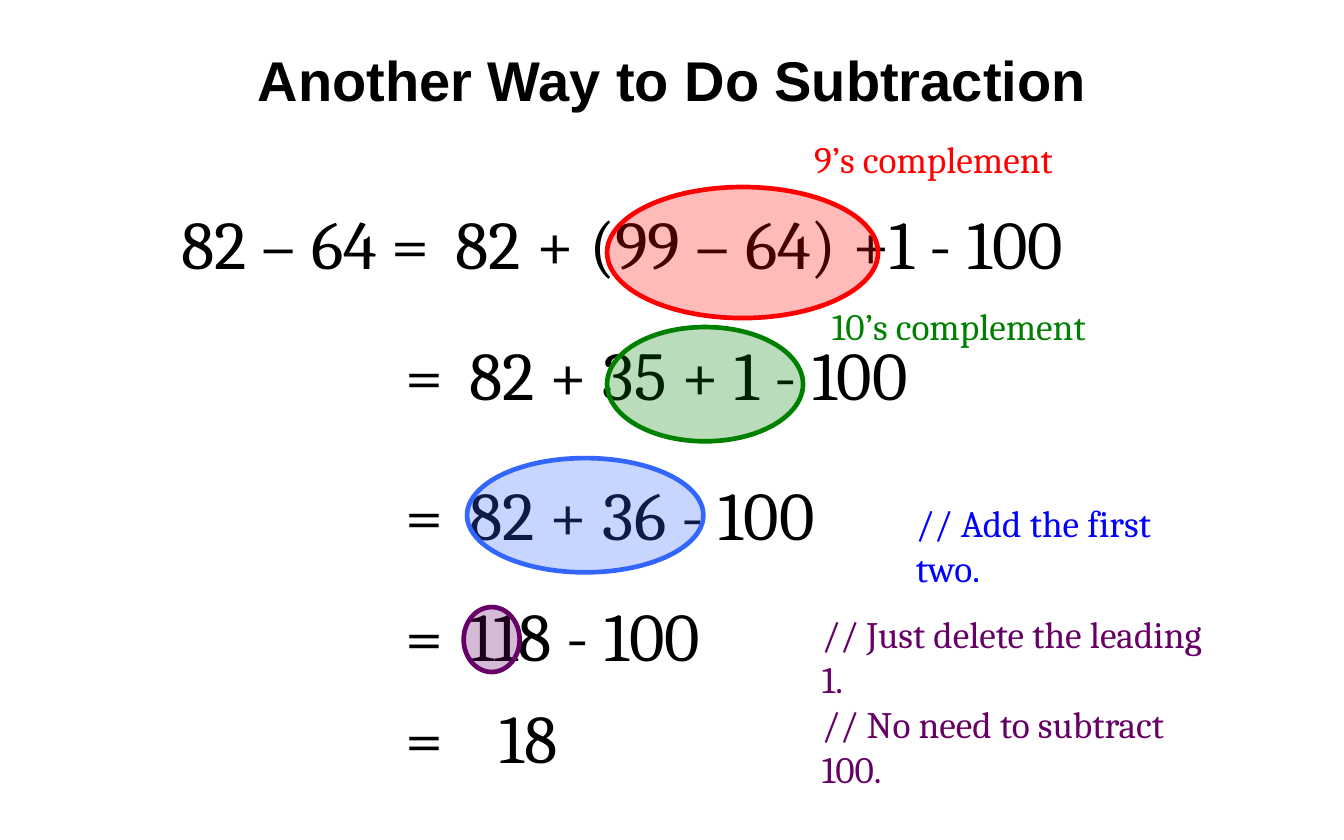
from dataclasses import dataclass

from lxml import etree
from pptx import Presentation
from pptx.dml.color import RGBColor
from pptx.enum.shapes import MSO_SHAPE
from pptx.enum.text import MSO_ANCHOR, MSO_AUTO_SIZE, PP_ALIGN
from pptx.oxml.ns import qn
from pptx.util import Inches, Pt

OVAL = MSO_SHAPE.OVAL
CENTER = PP_ALIGN.CENTER
MIDDLE = MSO_ANCHOR.MIDDLE
GROW = MSO_AUTO_SIZE.SHAPE_TO_FIT_TEXT
BLANK_LAYOUT = 6


@dataclass(frozen=True)
class Theme:
    black: str = "000000"
    red: str = "FF0000"
    green: str = "008000"
    blue: str = "0000FF"
    light_blue: str = "3366FF"
    purple: str = "660066"
    title_font: str = "Arial"
    body_font: str = "Cambria"
    title_size: int = 36
    equation_size: int = 44
    note_size: int = 24
    outline_width: int = 3
    opacity_percent: int = 27


@dataclass(frozen=True)
class Box:
    left: float
    top: float
    width: float
    height: float


@dataclass(frozen=True)
class Equation:
    text: str
    box: Box
    tab: float  # where the right-hand side starts, from the text edge


@dataclass(frozen=True)
class Highlight:
    box: Box
    color: str


@dataclass(frozen=True)
class Note:
    text: str
    box: Box
    color: str


THEME = Theme()
STEP_LEFT = 3.52
STEP_TAB = 0.57

TITLE_BOX = Box(0, 0.33, 12, 0.75)

EQUATIONS = [
    Equation("82 – 64 =\t82 + (99 – 64) +1 - 100", Box(1.52, 1.75, 9.27, 0.84), 2.45),
    Equation("=\t82 + 35 + 1 - 100", Box(STEP_LEFT, 2.92, 5.46, 0.84), STEP_TAB),
    Equation("=\t82 + 36 - 100", Box(STEP_LEFT, 4.17, 4.5, 0.84), STEP_TAB),
    Equation("=\t118 - 100", Box(STEP_LEFT, 5.25, 3.51, 0.84), STEP_TAB),
    Equation("=\t18", Box(STEP_LEFT, 6.16, 1.78, 0.84), 0.84),
]

HIGHLIGHTS = [
    Highlight(Box(5.42, 1.67, 2.42, 1.17), THEME.red),
    Highlight(Box(5.42, 2.92, 1.75, 1.02), THEME.green),
    Highlight(Box(4.17, 4.09, 2.11, 1.02), THEME.light_blue),
    Highlight(Box(4.14, 5.42, 0.5, 0.58), THEME.purple),
]

NOTES = [
    Note("9’s complement", Box(7.17, 1.17, 2.4, 0.51), THEME.red),
    Note("10’s complement", Box(7.33, 2.66, 2.52, 0.51), THEME.green),
    Note("// Add the first two.", Box(8.08, 4.42, 2.81, 0.51), THEME.blue),
    Note("// Just delete the leading 1.\n// No need to subtract 100.",
         Box(7.24, 5.41, 3.77, 0.91), THEME.purple),
]


def place(box: Box) -> list:
    return [Inches(value) for value in (box.left, box.top, box.width, box.height)]


def add_text(slide, text: str, box: Box, font: str, size: int, color: str):
    text_frame = slide.shapes.add_textbox(*place(box)).text_frame
    text_frame.word_wrap = True
    text_frame.text = text
    for paragraph in text_frame.paragraphs:
        for run in paragraph.runs:
            run.font.name = font
            run.font.size = Pt(size)
            run.font.color.rgb = RGBColor.from_string(color)
    return text_frame


def add_title(slide, text: str) -> None:
    text_frame = add_text(slide, text, TITLE_BOX, THEME.title_font,
                          THEME.title_size, THEME.black)
    text_frame.vertical_anchor = MIDDLE
    paragraph = text_frame.paragraphs[0]
    paragraph.alignment = CENTER
    paragraph.runs[0].font.bold = True


def add_equation(slide, equation: Equation) -> None:
    text_frame = add_text(slide, equation.text, equation.box, THEME.body_font,
                          THEME.equation_size, THEME.black)
    text_frame.auto_size = GROW
    properties = text_frame.paragraphs[0]._p.get_or_add_pPr()
    tab_list = etree.SubElement(properties, qn("a:tabLst"))
    etree.SubElement(tab_list, qn("a:tab"), pos=str(Inches(equation.tab)), algn="l")


def add_highlight(slide, highlight: Highlight) -> None:
    shape = slide.shapes.add_shape(OVAL, *place(highlight.box))
    shape.shadow.inherit = False
    color = RGBColor.from_string(highlight.color)
    shape.fill.solid()
    shape.fill.fore_color.rgb = color
    shape.line.color.rgb = color
    shape.line.width = Pt(THEME.outline_width)
    fill_color = shape._element.spPr.find(qn("a:solidFill"))[0]
    etree.SubElement(fill_color, qn("a:alpha"), val=str(THEME.opacity_percent * 1000))


def add_note(slide, note: Note) -> None:
    text_frame = add_text(slide, note.text, note.box, THEME.body_font,
                          THEME.note_size, note.color)
    text_frame.auto_size = GROW


def main() -> None:
    presentation = Presentation()
    presentation.slide_width = Inches(12)
    presentation.slide_height = Inches(7.5)
    slide = presentation.slides.add_slide(presentation.slide_layouts[BLANK_LAYOUT])

    # Title
    add_title(slide, "Another Way to Do Subtraction")

    # Steps of the calculation
    for equation in EQUATIONS:
        add_equation(slide, equation)

    # Translucent ovals over the terms under discussion
    for highlight in HIGHLIGHTS:
        add_highlight(slide, highlight)

    # Coloured remarks
    for note in NOTES:
        add_note(slide, note)

    presentation.save("out.pptx")


if __name__ == "__main__":
    main()
